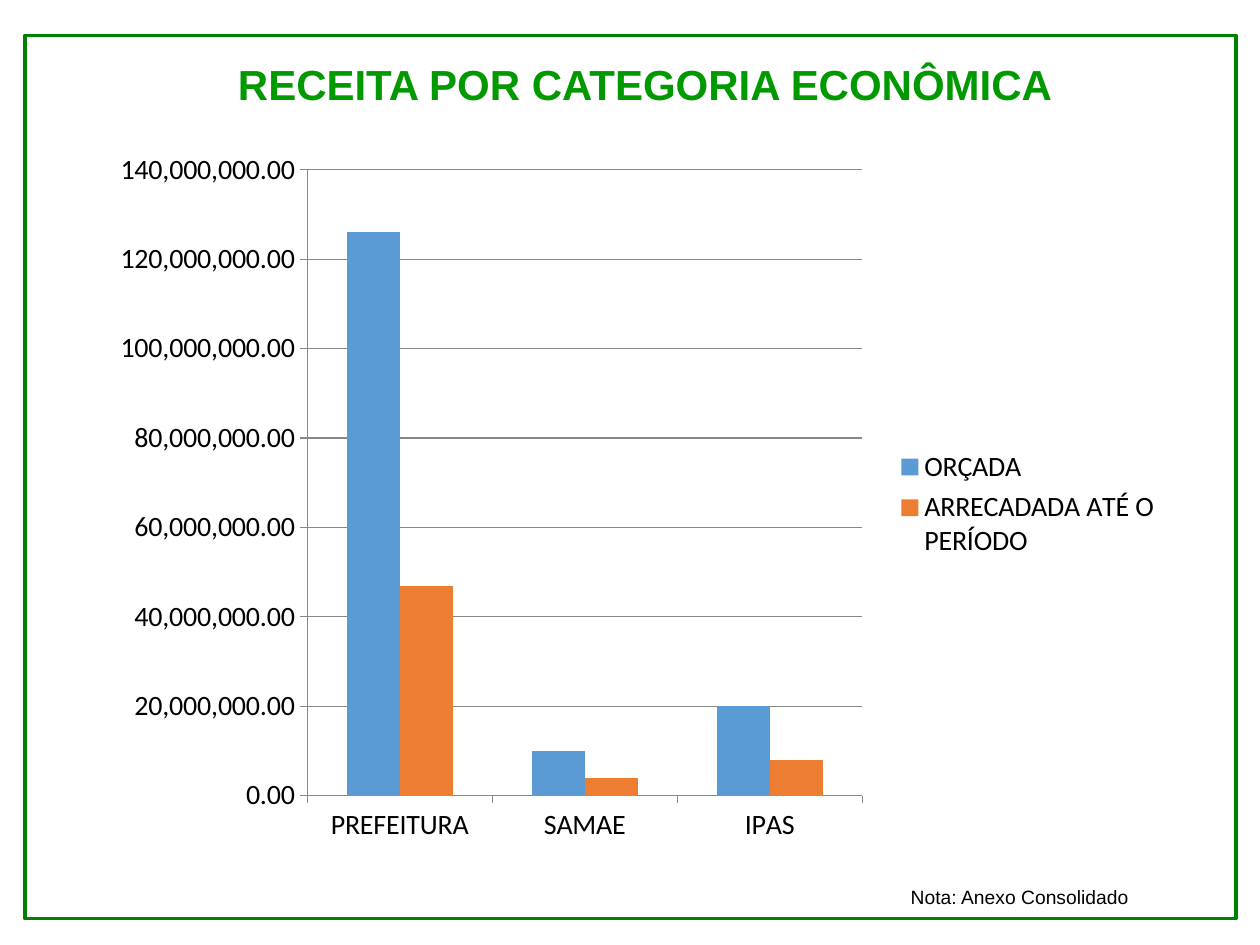
from pptx import Presentation
from pptx.chart.data import CategoryChartData
from pptx.dml.color import RGBColor
from pptx.enum.chart import XL_CHART_TYPE, XL_LEGEND_POSITION, XL_TICK_MARK
from pptx.enum.shapes import MSO_SHAPE
from pptx.enum.text import MSO_ANCHOR, PP_ALIGN
from pptx.oxml import parse_xml
from pptx.oxml.ns import nsdecls, qn
from pptx.util import Inches, Pt

COLUMN = XL_CHART_TYPE.COLUMN_CLUSTERED
RIGHT = XL_LEGEND_POSITION.RIGHT
OUT, NONE = XL_TICK_MARK.OUTSIDE, XL_TICK_MARK.NONE
RECT = MSO_SHAPE.RECTANGLE
TOP, MIDDLE = MSO_ANCHOR.TOP, MSO_ANCHOR.MIDDLE
LEFT, CENTER = PP_ALIGN.LEFT, PP_ALIGN.CENTER
BLACK = RGBColor(0x00, 0x00, 0x00)
GREEN = RGBColor(0x00, 0x99, 0x00)
DARK = RGBColor(0x00, 0x80, 0x00)
GRAY = RGBColor(0x87, 0x87, 0x87)
BLUE = RGBColor(0x5B, 0x9B, 0xD5)
ORANGE = RGBColor(0xED, 0x7D, 0x31)


def assign(item, values):
    for name, value in values.items():
        setattr(item, name, value)


def place(host, index, box, inner=False):
    for old in host.findall(qn("c:layout")):
        host.remove(old)
    target = '<c:layoutTarget val="inner"/>' if inner else ""
    modes = "".join(f'<c:{key}Mode val="edge"/>' for key in "xy")
    sizes = "".join(f'<c:{key} val="{value}"/>' for key, value in zip("xywh", box))
    host.insert(index, parse_xml(
        f'<c:layout {nsdecls("c")}><c:manualLayout>{target}{modes}{sizes}'
        "</c:manualLayout></c:layout>"))


class Painter:
    """Draw styled elements on the current slide."""

    def __init__(self, slide):
        self.slide = slide
        self.title = {"name": "Arial", "size": Pt(24), "bold": True}
        self.note = {"name": "Arial", "size": Pt(11)}
        self.label = {"name": "Calibri", "size": Pt(16)}

    def text(self, box, words, style, color, align=LEFT, anchor=TOP):
        frame = self.slide.shapes.add_textbox(*map(Inches, box)).text_frame
        assign(frame, {"word_wrap": True, "vertical_anchor": anchor})
        para = frame.paragraphs[0]
        para.alignment = align
        run = para.add_run()
        run.text = words
        assign(run.font, style)
        run.font.color.rgb = color

    def border(self, box, color, width):
        shape = self.slide.shapes.add_shape(RECT, *map(Inches, box))
        shape.shadow.inherit = False
        shape.fill.background()
        shape.line.color.rgb = color
        shape.line.width = Pt(width)

    def chart(self, box, groups, series):
        data = CategoryChartData(number_format="#,##0.00")
        data.categories = groups
        for name, _, values in series:
            data.add_series(name, values)
        chart = self.slide.shapes.add_chart(COLUMN, *map(Inches, box), data).chart
        assign(chart, {"has_title": False, "has_legend": True})
        assign(chart.font, self.label)
        chart.font.color.rgb = BLACK
        assign(chart.legend, {"position": RIGHT, "include_in_layout": False})
        plot = chart.plots[0]
        assign(plot, {"gap_width": 150, "overlap": 0, "vary_by_categories": False})
        for bar, (_, color, _) in zip(plot.series, series):
            bar.format.fill.solid()
            bar.format.fill.fore_color.rgb = color
        lines = [chart.value_axis.major_gridlines.format.line]
        for axis in (chart.category_axis, chart.value_axis):
            assign(axis, {"major_tick_mark": OUT, "minor_tick_mark": NONE})
            lines.append(axis.format.line)
        for line in lines:
            line.color.rgb = GRAY
            line.width = Pt(0.75)
        assign(chart.value_axis, {"minimum_scale": 0, "maximum_scale": 140_000_000,
                                  "major_unit": 20_000_000})
        assign(chart.value_axis.tick_labels,
               {"number_format": "#,##0.00", "number_format_is_linked": False})
        root = chart.element
        place(root.find(".//" + qn("c:plotArea")), 0, (0.19, 0.04, 0.52, 0.87), True)
        place(root.find(".//" + qn("c:legend")), 1, (0.74, 0.42, 0.25, 0.17))


def main():
    deck = Presentation()
    assign(deck, {"slide_width": Inches(10), "slide_height": Inches(7.5)})
    art = Painter(deck.slides.add_slide(deck.slide_layouts[6]))
    art.text((0.81, 0.21, 8.62, 0.91), "RECEITA POR CATEGORIA ECONÔMICA",
             art.title, GREEN, CENTER, MIDDLE)
    art.border((0.2, 0.28, 9.61, 7.01), DARK, 2)
    art.text((7.13, 6.98, 2.6, 0.29), "Nota: Anexo Consolidado", art.note, BLACK)
    art.chart((0.83, 1.12, 8.47, 5.71), ("PREFEITURA", "SAMAE", "IPAS"), (
        ("ORÇADA", BLUE, (126_000_000, 10_000_000, 20_000_000)),
        ("ARRECADADA ATÉ O PERÍODO", ORANGE, (47_000_000, 4_000_000, 8_000_000)),
    ))
    deck.save("out.pptx")


if __name__ == "__main__":
    main()
